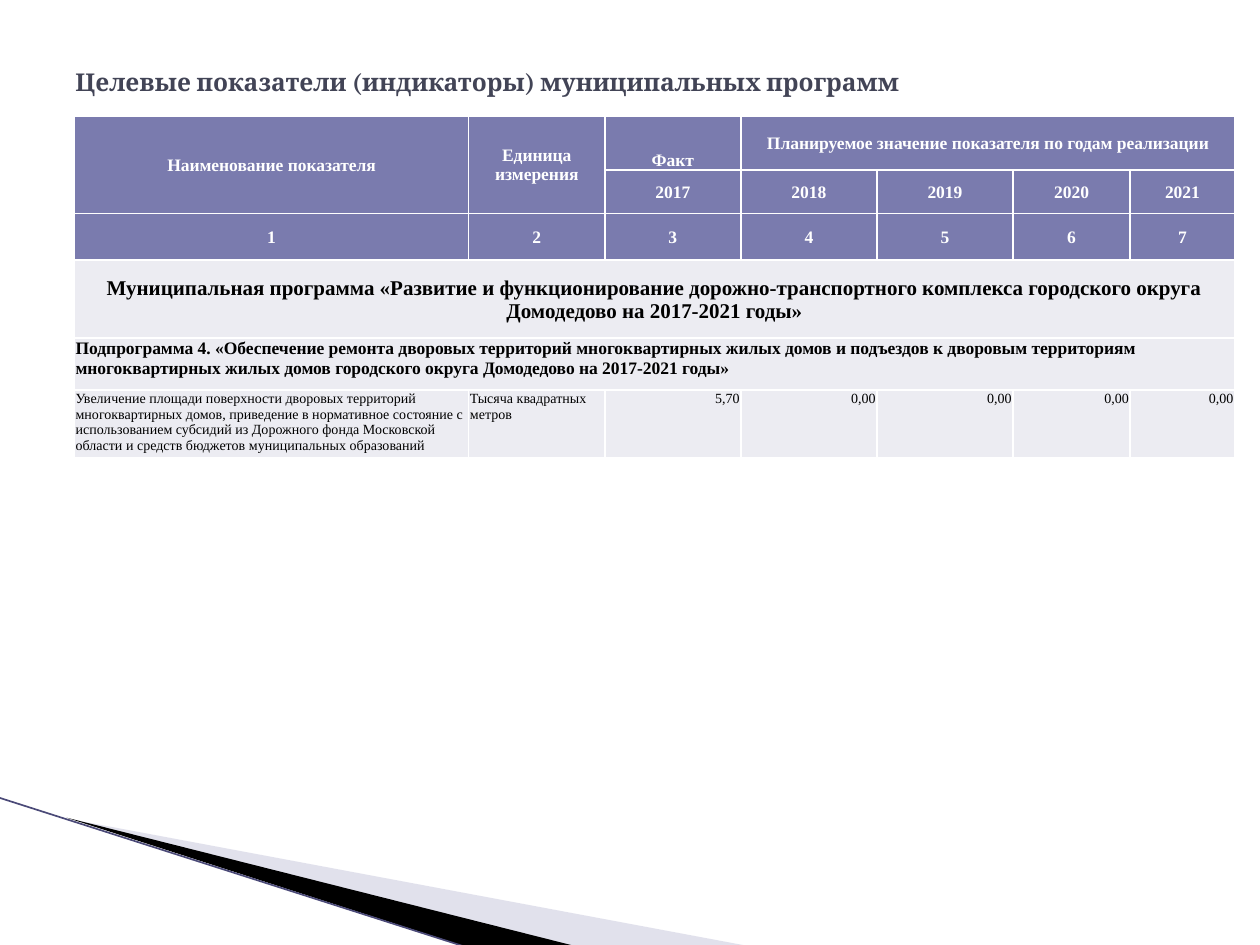
from dataclasses import dataclass

from lxml.etree import SubElement
from pptx import Presentation
from pptx.dml.color import RGBColor
from pptx.enum.shapes import MSO_CONNECTOR
from pptx.enum.text import MSO_ANCHOR, PP_ALIGN
from pptx.oxml import parse_xml
from pptx.oxml.ns import nsdecls, qn
from pptx.util import Inches, Pt

COLORS = {
    "title": "424456",
    "head": "7A7BAE",
    "body": "ECECF2",
    "white": "FFFFFF",
    "black": "000000",
    "wedge": "B6B6D1",
    "edge": "4B4A78",
}
LEFT, CENTER, RIGHT = PP_ALIGN.LEFT, PP_ALIGN.CENTER, PP_ALIGN.RIGHT
TOP, MIDDLE, BOTTOM = MSO_ANCHOR.TOP, MSO_ANCHOR.MIDDLE, MSO_ANCHOR.BOTTOM
COLS = [3.13, 1.08, 1.08, 1.08, 1.08, 0.93, 0.83]
ROWS = [0.43, 0.31, 0.37, 0.62, 0.41, 0.5]


@dataclass
class Style:
    size: float
    color: str
    bold: bool = True
    align: PP_ALIGN = LEFT
    anchor: MSO_ANCHOR = TOP
    fill: str = "body"
    face: str = "Times New Roman"


@dataclass
class Item:
    row: int
    col: int
    text: str
    style: Style
    down: int = 1
    across: int = 1


@dataclass
class Wedge:
    points: list[tuple[float, float]]
    color: str
    alpha: int = 100


HEAD = Style(10, "white", align=CENTER, anchor=MIDDLE, fill="head")
FACT = Style(10, "white", align=CENTER, anchor=BOTTOM, fill="head")
PROGRAM = Style(12, "black", align=CENTER, anchor=MIDDLE)
PART = Style(10, "black")
LABEL = Style(8, "black", bold=False)
VALUE = Style(8, "black", bold=False, align=RIGHT)
TITLE = Style(14, "title", anchor=MIDDLE, face="Cambria")

WEDGES = [
    Wedge([(0.55, 6.5), (5.95, 7.51), (4.56, 7.51)], "wedge", 40),
    Wedge([(0.53, 6.49), (4.57, 7.51), (3.72, 7.52)], "black"),
]
ITEMS = [
    Item(0, 0, "Наименование показателя", HEAD, down=2),
    Item(0, 1, "Единица измерения", HEAD, down=2),
    Item(0, 2, "Факт", FACT),
    Item(0, 3, "Планируемое значение показателя по годам реализации", HEAD, across=4),
    *[Item(1, col, str(2015 + col), HEAD) for col in range(2, 7)],
    *[Item(2, col, str(col + 1), HEAD) for col in range(7)],
    Item(3, 0, "Муниципальная программа «Развитие и функционирование "
         "дорожно-транспортного комплекса городского округа "
         "Домодедово на 2017-2021 годы»", PROGRAM, across=7),
    Item(4, 0, "Подпрограмма 4. «Обеспечение ремонта дворовых территорий "
         "многоквартирных жилых домов и подъездов к дворовым территориям "
         "многоквартирных жилых домов городского округа Домодедово "
         "на 2017-2021 годы»", PART, across=7),
    Item(5, 0, "Увеличение площади поверхности дворовых территорий "
         "многоквартирных домов, приведение в нормативное состояние с "
         "использованием субсидий из Дорожного фонда Московской области "
         "и средств бюджетов муниципальных образований", LABEL),
    Item(5, 1, "Тысяча квадратных метров", LABEL),
    *[Item(5, col, text, VALUE)
      for col, text in enumerate(["5,70"] + ["0,00"] * 4, start=2)],
]


def rgb(name: str) -> RGBColor:
    return RGBColor.from_string(COLORS[name])


def write(frame, text: str, style: Style) -> None:
    para = frame.paragraphs[0]
    para.text = text
    para.alignment = style.align
    font = para.font
    font.name = style.face
    font.size = Pt(style.size)
    font.bold = style.bold
    font.color.rgb = rgb(style.color)


def draw_wedge(shapes, wedge: Wedge) -> None:
    points = [(Inches(x), Inches(y)) for x, y in wedge.points]
    outline = shapes.build_freeform(*points[0])
    outline.add_line_segments(points[1:], close=True)
    shape = outline.convert_to_shape()
    shape.shadow.inherit = False
    shape.fill.solid()
    shape.fill.fore_color.rgb = rgb(wedge.color)
    shape.line.fill.background()
    if wedge.alpha < 100:
        tint = shape._element.spPr.find(".//" + qn("a:srgbClr"))
        SubElement(tint, qn("a:alpha")).set("val", str(wedge.alpha * 1000))


def draw_edge(shapes) -> None:
    edge = shapes.add_connector(MSO_CONNECTOR.STRAIGHT, Inches(-0.01),
                                Inches(6.33), Inches(3.71), Inches(7.52))
    edge.line.color.rgb = rgb("edge")
    edge.line.width = Pt(0.95)
    SubElement(edge._element.spPr, qn("a:effectLst"))


def draw_title(shapes) -> None:
    box = shapes.add_textbox(Inches(0.5), Inches(0.3), Inches(9), Inches(0.69))
    frame = box.text_frame
    frame.word_wrap = True
    frame.vertical_anchor = TITLE.anchor
    write(frame, "Целевые показатели (индикаторы) муниципальных программ", TITLE)


def add_border(cell) -> None:
    """Put white lines on all sides, ahead of the fill as the schema asks."""
    props = cell._tc.get_or_add_tcPr()
    for place, side in enumerate(("lnL", "lnR", "lnT", "lnB")):
        props.insert(place, parse_xml(
            f'<a:{side} {nsdecls("a")} w="{Pt(1)}"><a:solidFill>'
            f'<a:srgbClr val="{COLORS["white"]}"/></a:solidFill></a:{side}>'))


def draw_table(shapes) -> None:
    table = shapes.add_table(len(ROWS), len(COLS), Inches(0.59), Inches(0.92),
                             Inches(sum(COLS)), Inches(sum(ROWS))).table
    for col, width in zip(table.columns, COLS):
        col.width = Inches(width)
    for row, height in zip(table.rows, ROWS):
        row.height = Inches(height)
    for num, row in enumerate(table.rows):
        for cell in row.cells:
            cell.margin_left = cell.margin_right = cell.margin_top = Inches(0.01)
            cell.margin_bottom = 0
            cell.fill.solid()
            cell.fill.fore_color.rgb = rgb("head" if num < 3 else "body")
            add_border(cell)
    for item in ITEMS:
        cell = table.cell(item.row, item.col)
        if item.down > 1 or item.across > 1:
            cell.merge(table.cell(item.row + item.down - 1,
                                  item.col + item.across - 1))
        cell.vertical_anchor = item.style.anchor
        write(cell.text_frame, item.text, item.style)


def main() -> None:
    deck = Presentation()
    deck.slide_width, deck.slide_height = Inches(10), Inches(7.5)
    shapes = deck.slides.add_slide(deck.slide_layouts[6]).shapes
    for wedge in WEDGES:
        draw_wedge(shapes, wedge)
    draw_edge(shapes)
    draw_title(shapes)
    draw_table(shapes)
    deck.save("out.pptx")


if __name__ == "__main__":
    main()
